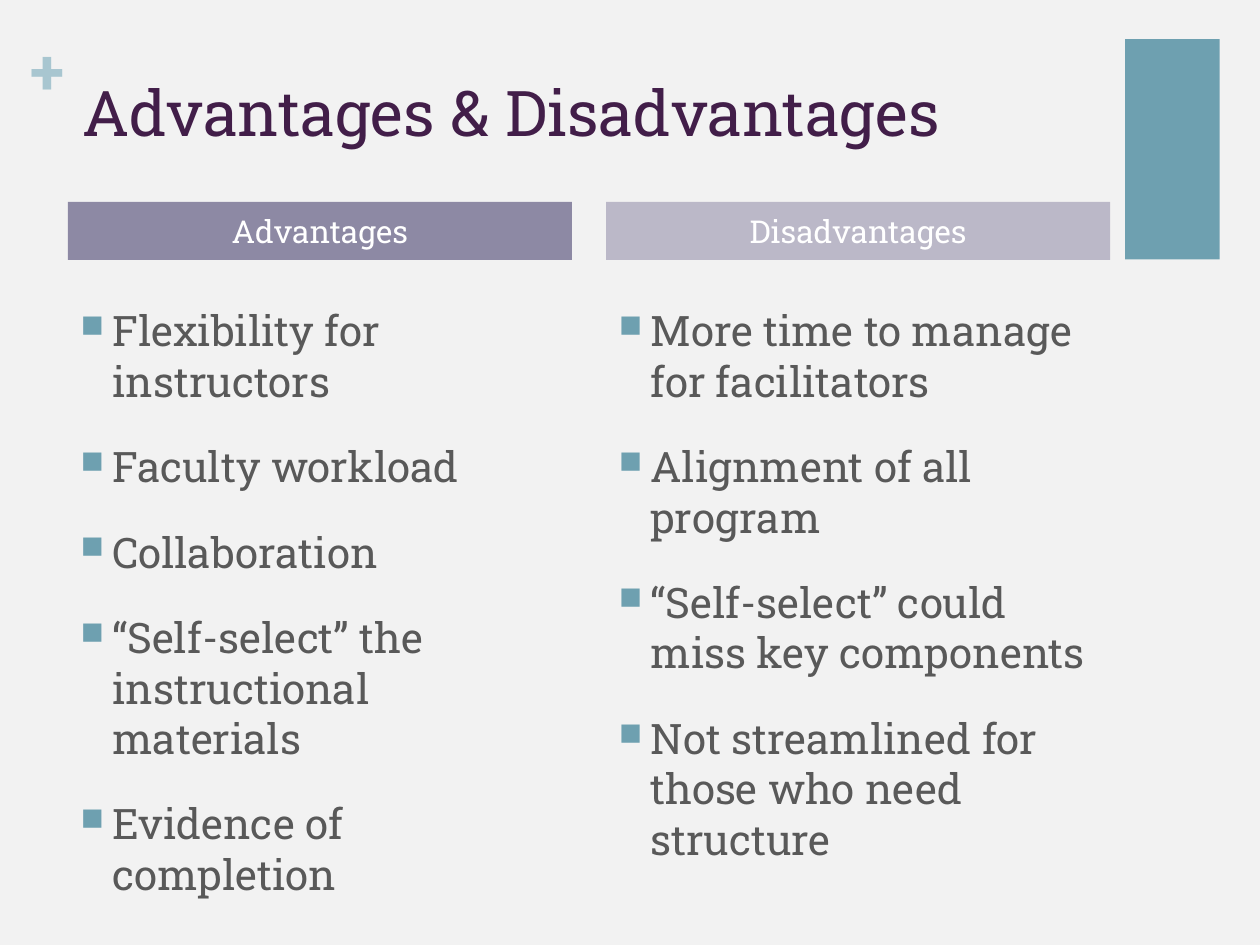
from dataclasses import dataclass

from lxml.etree import SubElement
from pptx import Presentation
from pptx.dml.color import RGBColor
from pptx.enum.shapes import MSO_SHAPE
from pptx.enum.text import MSO_ANCHOR as Anchor, MSO_AUTO_SIZE as AutoSize, PP_ALIGN as Align
from pptx.oxml.ns import qn
from pptx.util import Cm, Pt

FONT = "Roboto Slab"
PAPER = RGBColor(0xF2, 0xF2, 0xF2)
TEAL = RGBColor(0x6E, 0xA0, 0xB0)
PALE_TEAL = RGBColor(0xA8, 0xC6, 0xD0)
PLUM = RGBColor(0x42, 0x1E, 0x49)
GREY = RGBColor(0x59, 0x59, 0x59)
WHITE = RGBColor(0xFF, 0xFF, 0xFF)
PURPLE = RGBColor(0x8D, 0x89, 0xA4)
LILAC = RGBColor(0xBB, 0xB8, 0xC8)

COLUMN_LEFT, COLUMN_WIDTH, COLUMN_STEP = 1.37, 10.16, 10.85
HEADING_TOP, HEADING_HEIGHT = 4.07, 1.17
LIST_TOP, LIST_HEIGHT = 6.02, 11.0
BULLET_INDENT = Cm(0.64)


@dataclass
class Column:
    heading: str
    fill: RGBColor
    points: list[str]


COLUMNS = [
    Column("Advantages", PURPLE, [
        "Flexibility for instructors",
        "Faculty workload",
        "Collaboration",
        "“Self-select” the instructional materials",
        "Evidence of completion",
    ]),
    Column("Disadvantages", LILAC, [
        "More time to manage for facilitators",
        "Alignment of all program",
        "“Self-select” could miss key components",
        "Not streamlined for those who need structure",
    ]),
]


def place(shape, left: float, top: float, width: float, height: float) -> None:
    """Move and size a shape, in centimetres."""
    shape.left, shape.top = Cm(left), Cm(top)
    shape.width, shape.height = Cm(width), Cm(height)


def add_bullet(paragraph) -> None:
    """Give a paragraph a hanging square bullet."""
    props = paragraph._p.get_or_add_pPr()
    props.set("marL", str(BULLET_INDENT))
    props.set("indent", str(-BULLET_INDENT))
    SubElement(SubElement(props, qn("a:buClr")), qn("a:srgbClr"), val=str(TEAL))
    SubElement(props, qn("a:buSzPct"), val="75000")
    SubElement(props, qn("a:buFont"), typeface="OpenSymbol")
    SubElement(props, qn("a:buChar"), char="■")


def write(shape, *lines: str, size: int, color: RGBColor, bold: bool = False,
          align: Align = Align.LEFT, anchor: Anchor = Anchor.TOP,
          before: int = 0, bullets: bool = False, wrap: bool = True) -> None:
    """Fill a shape with one formatted paragraph per line."""
    frame = shape.text_frame
    frame.word_wrap = wrap
    frame.auto_size = AutoSize.NONE
    frame.vertical_anchor = anchor
    for index, line in enumerate(lines):
        paragraph = frame.add_paragraph() if index else frame.paragraphs[0]
        paragraph.alignment = align
        paragraph.space_before = Pt(before)
        if bullets:
            add_bullet(paragraph)
        run = paragraph.add_run()
        run.text = line
        run.font.name, run.font.size = FONT, Pt(size)
        run.font.bold, run.font.color.rgb = bold, color


def draw_column(column: Column, left: float, heading, points) -> None:
    """Fill a heading bar and the list below it."""
    place(heading, left, HEADING_TOP, COLUMN_WIDTH, HEADING_HEIGHT)
    heading.fill.solid()
    heading.fill.fore_color.rgb = column.fill
    heading.text_frame.margin_top = heading.text_frame.margin_bottom = 0
    write(heading, column.heading, size=18, color=WHITE,
          align=Align.CENTER, anchor=Anchor.MIDDLE)

    place(points, left, LIST_TOP, COLUMN_WIDTH, LIST_HEIGHT)
    write(points, *column.points, size=24, color=GREY, before=20, bullets=True)


def main() -> None:
    deck = Presentation()
    deck.slide_width, deck.slide_height = Cm(25.4), Cm(19.05)
    slide = deck.slides.add_slide(deck.slide_layouts.get_by_name("Comparison"))
    slide.background.fill.solid()
    slide.background.fill.fore_color.rgb = PAPER

    # Corner block and plus sign
    block = slide.shapes.add_shape(
        MSO_SHAPE.RECTANGLE, Cm(22.68), Cm(0.79), Cm(1.91), Cm(4.44))
    block.shadow.inherit = False
    block.fill.solid()
    block.fill.fore_color.rgb = TEAL
    block.line.fill.background()

    plus = slide.shapes.add_textbox(Cm(0.61), Cm(0.64), Cm(0.74), Cm(1.55))
    frame = plus.text_frame
    frame.margin_left = frame.margin_right = frame.margin_top = frame.margin_bottom = 0
    write(plus, "+", size=36, color=PALE_TEAL, bold=True, wrap=False)

    # Title
    title = slide.shapes.title
    place(title, 1.4, 1.35, 20.98, 3.1)
    write(title, "Advantages & Disadvantages", size=36, color=PLUM)

    # Two columns: each has a heading and a list placeholder
    bodies = list(slide.placeholders)[1:]
    for index, column in enumerate(COLUMNS):
        heading, points = bodies[2 * index:2 * index + 2]
        draw_column(column, COLUMN_LEFT + index * COLUMN_STEP, heading, points)

    deck.save("out.pptx")


if __name__ == "__main__":
    main()
